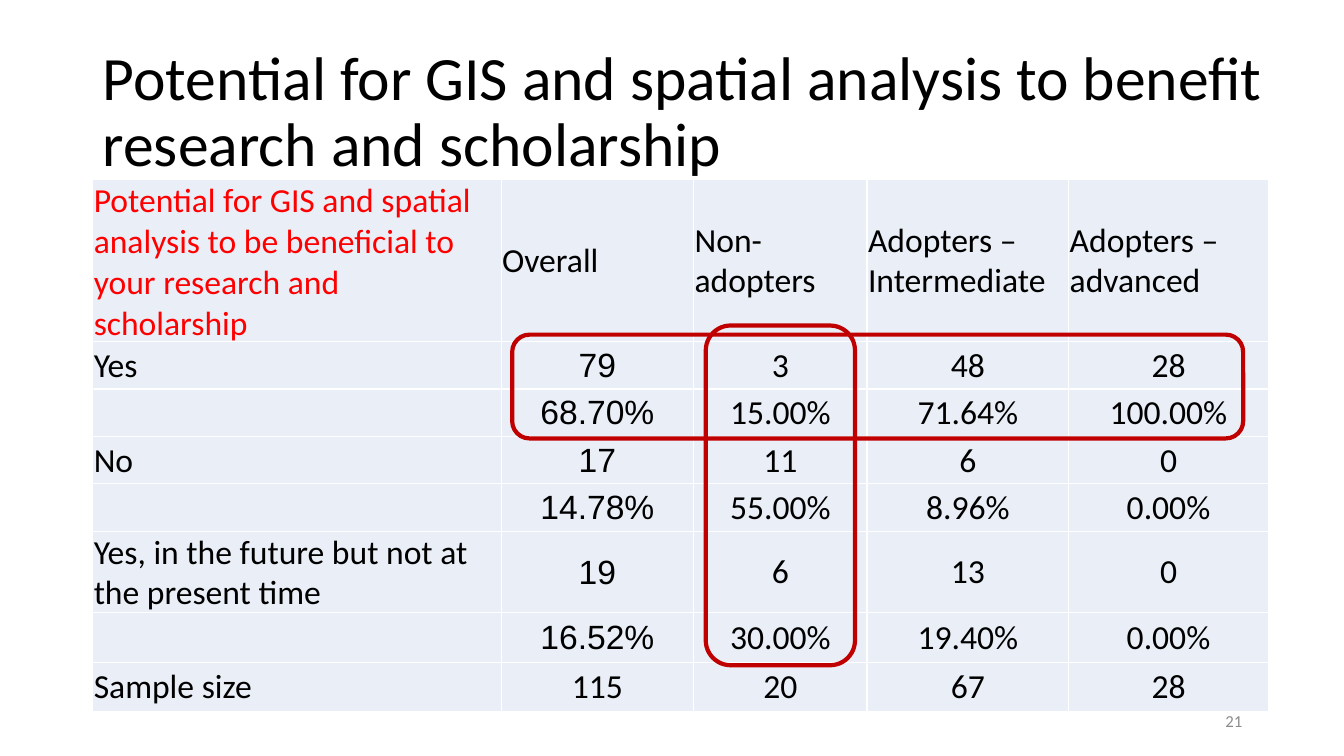
from lxml import etree
from pptx import Presentation, util as u
from pptx.dml.color import RGBColor
from pptx.enum import shapes, text
from pptx.oxml import ns

BLACK = RGBColor(0, 0, 0)
RED = RGBColor(0xFF, 0, 0)
DARK_RED = RGBColor(0xC0, 0, 0)
GRAY = RGBColor(0x8C, 0x8C, 0x8C)
PALE_BLUE = RGBColor(0xEA, 0xEF, 0xF7)
WHITE = RGBColor(0xFF, 0xFF, 0xFF)

COLUMNS = [4.05, 1.91, 1.72, 2, 1.98]
ROWS = [1.41, 0.47, 0.47, 0.47, 0.47, 0.68, 0.49, 0.49]
ANSWERS = [
    ["Potential for GIS and spatial analysis to be beneficial to your research and scholarship",
     "Overall", "Non-adopters", "Adopters – Intermediate", "Adopters – advanced"],
    ["Yes", "79", "3", "48", "28"],
    ["", "68.70%", "15.00%", "71.64%", "100.00%"],
    ["No", "17", "11", "6", "0"],
    ["", "14.78%", "55.00%", "8.96%", "0.00%"],
    ["Yes, in the future but not at the present time", "19", "6", "13", "0"],
    ["", "16.52%", "30.00%", "19.40%", "0.00%"],
    ["Sample size", "115", "20", "67", "28"],
]


def inches(box):
    return [u.Inches(length) for length in box]


def write(frame, words, size, color, align, font="Calibri"):
    paragraph = frame.paragraphs[0]
    paragraph.alignment = align
    run = paragraph.add_run()
    run.text = words
    run.font.size = u.Pt(size)
    run.font.name = font
    run.font.color.rgb = color
    return paragraph


def add_words(slide, box, words, size, color, align):
    frame = slide.shapes.add_textbox(*inches(box)).text_frame
    frame.word_wrap = True
    frame.vertical_anchor = text.MSO_ANCHOR.MIDDLE
    return write(frame, words, size, color, align)


def add_title(slide, box):
    title = add_words(slide, box,
                      "Potential for GIS and spatial analysis to benefit research and scholarship",
                      44, BLACK, text.PP_ALIGN.LEFT)
    title.line_spacing = 0.9


def outline_cell(cell):
    properties = cell._tc.get_or_add_tcPr()
    for position, side in enumerate(("a:lnL", "a:lnR", "a:lnT", "a:lnB")):
        border = etree.Element(ns.qn(side), w=str(u.Pt(1)))
        fill = etree.SubElement(border, ns.qn("a:solidFill"))
        etree.SubElement(fill, ns.qn("a:srgbClr"), val=str(WHITE))
        properties.insert(position, border)


def add_answers(slide, box):
    answers = slide.shapes.add_table(len(ROWS), len(COLUMNS), *inches(box)).table
    answers.first_row = answers.horz_banding = False
    for column, width in zip(answers.columns, COLUMNS):
        column.width = u.Inches(width)
    for row, height in zip(answers.rows, ROWS):
        row.height = u.Inches(height)
    for r, line in enumerate(ANSWERS):
        for c, words in enumerate(line):
            cell = answers.cell(r, c)
            cell.margin_left = cell.margin_right = cell.margin_top = u.Inches(0.01)
            cell.margin_bottom = 0
            cell.vertical_anchor = text.MSO_ANCHOR.MIDDLE
            cell.fill.solid()
            cell.fill.fore_color.rgb = PALE_BLUE
            outline_cell(cell)
            if words:
                is_count = r > 0 and c > 0
                is_overall = c == 1 and 0 < r < len(ROWS) - 1
                write(cell.text_frame, words, 24,
                      RED if r == c == 0 else BLACK,
                      text.PP_ALIGN.CENTER if is_count else text.PP_ALIGN.LEFT,
                      "Arial" if is_overall else "Calibri")


def add_highlight(slide, box):
    highlight = slide.shapes.add_shape(shapes.MSO_SHAPE.ROUNDED_RECTANGLE, *inches(box))
    highlight.shadow.inherit = False
    highlight.fill.background()
    highlight.line.color.rgb = DARK_RED
    highlight.line.width = u.Pt(3)


def main():
    deck = Presentation()
    deck.slide_width, deck.slide_height = inches((13.33, 7.5))
    slide = deck.slides.add_slide(deck.slide_layouts[6])
    add_title(slide, (0.92, 0.4, 11.76, 1.45))
    add_words(slide, (9.42, 6.95, 3, 0.4), "21", 12, GRAY, text.PP_ALIGN.RIGHT)
    add_answers(slide, (0.92, 1.78, sum(COLUMNS), sum(ROWS)))
    for box in ((5.08, 3.32, 7.25, 1.03), (7, 3.23, 1.48, 3.37)):
        add_highlight(slide, box)
    deck.save("out.pptx")


if __name__ == "__main__":
    main()
